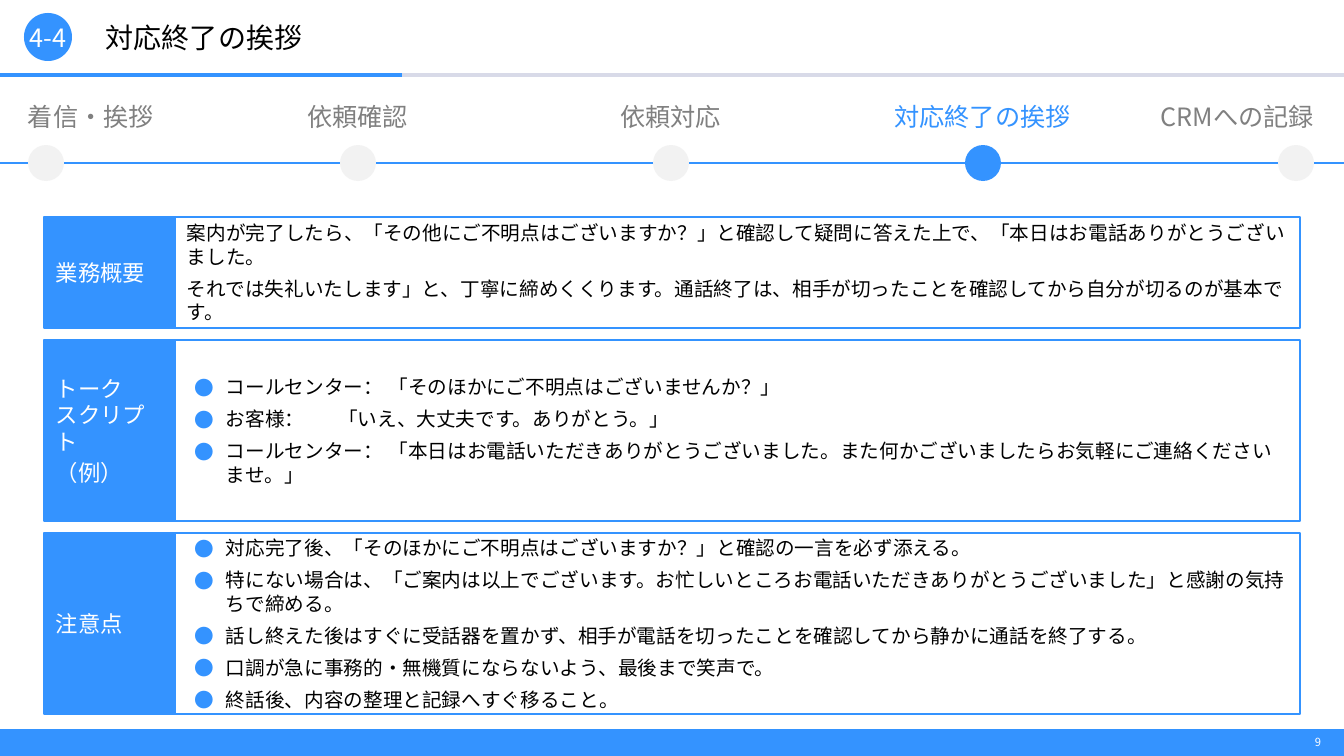
from lxml.etree import SubElement
from pptx import Presentation
from pptx.dml.color import RGBColor
from pptx.enum.shapes import MSO_CONNECTOR, MSO_SHAPE
from pptx.enum.text import MSO_ANCHOR, PP_ALIGN
from pptx.oxml.ns import qn
from pptx.util import Emu, Pt

FONT = "Noto Sans CJK JP"
BLUE = RGBColor(0x34, 0x93, 0xFF)
BLACK = RGBColor(0, 0, 0)
WHITE = RGBColor(0xFF, 0xFF, 0xFF)
GRAY = RGBColor(0x80, 0x80, 0x80)
PALE = RGBColor(0xF2, 0xF2, 0xF2)
RULE = RGBColor(0xD8, 0xDA, 0xE8)

WIDTH, HEIGHT = 1344, 756
STEPS = ["着信・挨拶", "依頼確認", "依頼対応", "対応終了の挨拶", "CRMへの記録"]
CURRENT_STEP = 3
PANELS = [
    (111, ["業務概要"], False, [
        "案内が完了したら、「その他にご不明点はございますか？」と確認して疑問に答えた上で、「本日はお電話ありがとうございました。",
        "それでは失礼いたします」と、丁寧に締めくくります。通話終了は、相手が切ったことを確認してから自分が切るのが基本です。",
    ]),
    (181, ["トーク\nスクリプト", "（例）"], True, [
        "コールセンター：\t「そのほかにご不明点はございませんか？」",
        "お客様：\t「いえ、大丈夫です。ありがとう。」",
        "コールセンター：\t「本日はお電話いただきありがとうございました。また何かございましたらお気軽にご連絡くださいませ。」",
    ]),
    (181, ["注意点"], True, [
        "対応完了後、「そのほかにご不明点はございますか？」と確認の一言を必ず添える。",
        "特にない場合は、「ご案内は以上でございます。お忙しいところお電話いただきありがとうございました」と感謝の気持ちで締める。",
        "話し終えた後はすぐに受話器を置かず、相手が電話を切ったことを確認してから静かに通話を終了する。",
        "口調が急に事務的・無機質にならないよう、最後まで笑声で。",
        "終話後、内容の整理と記録へすぐ移ること。",
    ]),
]


def px(n):
    return Emu(round(n * 914400 / 100.8))


def box(*lengths):
    return [px(n) for n in lengths]


def set_indent(p, left, first=0):
    pPr = p._p.get_or_add_pPr()
    pPr.set("marL", str(px(left)))
    pPr.set("indent", str(px(first)))
    return pPr


def add_bullet(p):
    pPr = set_indent(p, 39, -31)
    color = SubElement(pPr, qn("a:buClr"))
    SubElement(color, qn("a:srgbClr"), val=str(BLUE))
    SubElement(pPr, qn("a:buFont"), typeface=FONT)
    SubElement(pPr, qn("a:buChar"), char="●")


def add_run(p, text, size, color):
    r = p.add_run()
    r.text = text
    r.font.size = Pt(size)
    r.font.name = FONT
    r.font.color.rgb = color
    SubElement(r._r.get_or_add_rPr(), qn("a:ea"), typeface=FONT)


def write(sp, paragraphs, size, color, align=PP_ALIGN.LEFT, before=0, bullets=False):
    tf = sp.text_frame
    tf.word_wrap = True
    tf.vertical_anchor = MSO_ANCHOR.MIDDLE
    for i, text in enumerate(paragraphs):
        p = tf.add_paragraph() if i else tf.paragraphs[0]
        p.alignment = align
        p.space_before = Pt(before)
        if bullets:
            add_bullet(p)
        for j, line in enumerate(text.split("\n")):
            if j:
                p.add_line_break()
            add_run(p, line, size, color)
    return tf


def add_text(s, bounds, text, size, color, align=PP_ALIGN.LEFT, before=0):
    sp = s.shapes.add_textbox(*box(*bounds))
    return write(sp, [text], size, color, align, before)


def add_line(s, y, right, color, width):
    line = s.shapes.add_connector(MSO_CONNECTOR.STRAIGHT, *box(0, y, right, y))
    line.line.color.rgb = color
    line.line.width = Pt(width)
    SubElement(line._element.spPr, qn("a:effectLst"))


def add_shape(s, kind, bounds, fill=None, border=None):
    sp = s.shapes.add_shape(kind, *box(*bounds))
    sp.shadow.inherit = False
    if fill is None:
        sp.fill.background()
    else:
        sp.fill.solid()
        sp.fill.fore_color.rgb = fill
    if border is None:
        sp.line.fill.background()
    else:
        sp.line.color.rgb = border
        sp.line.width = Pt(1.5)
    return sp


def add_header(s):
    tf = add_text(s, (40, 16, 1263, 42), "対応終了の挨拶", 20, BLACK, before=6)
    set_indent(tf.paragraphs[0], 56)
    add_line(s, 75, WIDTH, RULE, 3)
    add_line(s, 75, 402, BLUE, 3)
    badge = add_shape(s, MSO_SHAPE.OVAL, (24, 13, 48, 48), BLUE)
    write(badge, ["4-4"], 18, WHITE, PP_ALIGN.CENTER).word_wrap = False


def add_footer(s):
    add_line(s, 743, WIDTH, BLUE, 20)
    add_text(s, (1282, 730, 49, 25), "9", 8, WHITE, PP_ALIGN.RIGHT)


def add_steps(s):
    add_line(s, 163, WIDTH, BLUE, 1.5)
    last = len(STEPS) - 1
    dot, label = 36, 211
    for i, text in enumerate(STEPS):
        active = i == CURRENT_STEP
        left = 28 + 1250 * i // last
        x, align = left + (dot - label) // 2, PP_ALIGN.CENTER
        if i == 0:
            x, align = left - 10, PP_ALIGN.LEFT
        elif i == last:
            x, align = left + dot + 10 - label, PP_ALIGN.RIGHT
        add_text(s, (x, 99, label, 35), text, 18, BLUE if active else GRAY, align, 6)
        add_shape(s, MSO_SHAPE.OVAL, (left, 145, dot, dot), BLUE if active else PALE)


def add_panel(s, y, height, heading, bullets, body):
    content = add_shape(s, MSO_SHAPE.RECTANGLE, (175, y, 1125, height), border=BLUE)
    write(content, body, 14, BLACK, before=6, bullets=bullets).margin_left = px(12)
    label = add_shape(s, MSO_SHAPE.RECTANGLE, (44, y, 131, height), BLUE, BLUE)
    write(label, heading, 16, WHITE, before=3).margin_left = px(12)


def main():
    prs = Presentation()
    prs.slide_width, prs.slide_height = box(WIDTH, HEIGHT)
    s = prs.slides.add_slide(prs.slide_layouts[6])
    add_header(s)
    add_footer(s)
    y = 217
    for height, heading, bullets, body in PANELS:
        add_panel(s, y, height, heading, bullets, body)
        y += height + 12
    add_steps(s)
    prs.save("out.pptx")


if __name__ == "__main__":
    main()
